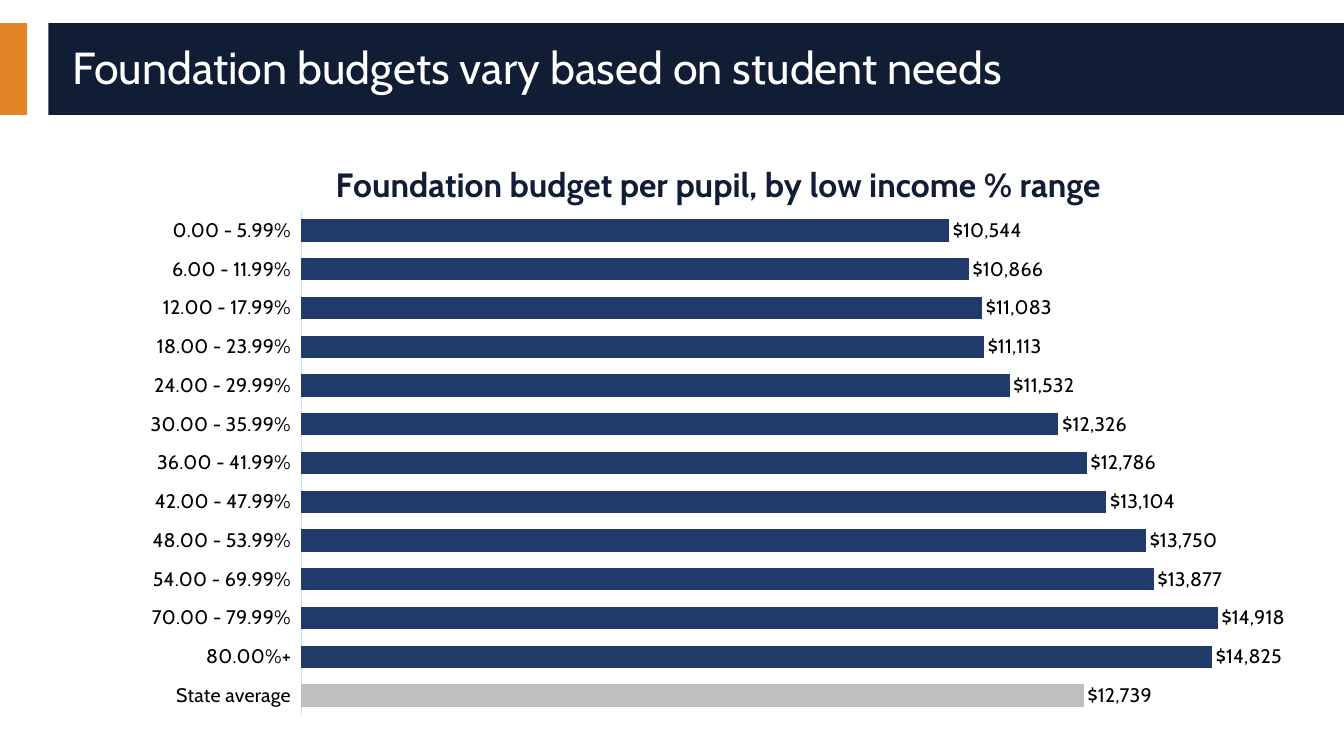
from lxml.etree import SubElement
from pptx import Presentation
from pptx.chart.data import CategoryChartData
from pptx.dml.color import RGBColor
from pptx.enum.chart import XL_CHART_TYPE, XL_LABEL_POSITION, XL_TICK_LABEL_POSITION, XL_TICK_MARK
from pptx.enum.shapes import MSO_SHAPE
from pptx.enum.text import MSO_ANCHOR, MSO_AUTO_SIZE, PP_ALIGN
from pptx.oxml.ns import qn
from pptx.util import Inches, Pt

NAVY, BLUE, ORANGE, GREY = "101D35", "203B6A", "E38526", "BFBFBF"
MONEY = '"$"#,##0'


def style(font, tint, **form):
    """Set the colour and any other format values of a font."""
    font.color.rgb = RGBColor.from_string(tint)
    for key, val in {"name": "Cabin", "bold": False, **form}.items():
        setattr(font, key, val)


def place(owner, before, **spots):
    """Give a chart part a fixed place, as shares of the chart's size."""
    for old in owner.findall(qn("c:layout")):
        owner.remove(old)
    layout = SubElement(owner, qn("c:layout"))
    before.addprevious(layout)
    manual = SubElement(layout, qn("c:manualLayout"))
    for key, val in spots.items():
        SubElement(manual, qn("c:" + key)).set("val", str(val))


deck = Presentation()
deck.slide_width, deck.slide_height = Inches(13.33), Inches(7.5)
slide = deck.slides.add_slide(deck.slide_layouts[5])
wide = deck.slide_width

# Header band, kept behind the title
top, high = Inches(0.23), Inches(0.91)
edge = Inches(0.48)
bands = [(0, Inches(0.27), ORANGE), (edge, wide - edge, NAVY)]
for spot, (left, width, tint) in enumerate(bands, 2):
    band = slide.shapes.add_shape(MSO_SHAPE.RECTANGLE, left, top, width, high)
    band.shadow.inherit = False
    band.fill.solid()
    band.fill.fore_color.rgb = RGBColor.from_string(tint)
    band.line.fill.background()
    slide.shapes._spTree.insert(spot, band._element)

# Title
title = slide.shapes.title
box = {"left": 0.62, "top": 0.32, "width": 12.44, "height": 0.74}
for key, val in box.items():
    setattr(title, key, Inches(val))
frame = title.text_frame
frame.text = "Foundation budgets vary based on student needs"
frame.vertical_anchor = MSO_ANCHOR.MIDDLE
frame.auto_size = MSO_AUTO_SIZE.NONE
para = frame.paragraphs[0]
para.alignment, para.line_spacing = PP_ALIGN.LEFT, 0.9
style(para.runs[0].font, "FFFFFF", size=Pt(32))

# Chart values, from the bottom bar up
budgets = {
    "State average": 12739,
    "80.00%+": 14825,
    "70.00 - 79.99%": 14918,
    "54.00 - 69.99%": 13877,
    "48.00 - 53.99%": 13750,
    "42.00 - 47.99%": 13104,
    "36.00 - 41.99%": 12786,
    "30.00 - 35.99%": 12326,
    "24.00 - 29.99%": 11532,
    "18.00 - 23.99%": 11113,
    "12.00 - 17.99%": 11083,
    "6.00 - 11.99%": 10866,
    "0.00 - 5.99%": 10544,
}
data = CategoryChartData(number_format=MONEY)
data.categories = list(budgets)
data.add_series("Series 1", list(budgets.values()))
chart = slide.shapes.add_chart(
    XL_CHART_TYPE.BAR_CLUSTERED, Inches(1.28), Inches(1.3),
    Inches(11.69), Inches(5.93), data).chart
chart.has_legend = False
style(chart.font, BLUE, size=Pt(10))

# Chart title
head = chart.chart_title
head.text_frame.text = "Foundation budget per pupil, by low income % range"
style(head.text_frame.paragraphs[0].runs[0].font, NAVY, size=Pt(24), bold=True)
head.include_in_layout = False
place(head._element, head._element.find(qn("c:overlay")),
      xMode="edge", yMode="edge", x=0.17, y=0.04)

# Axes
cats, vals = chart.category_axis, chart.value_axis
cats.major_tick_mark = cats.minor_tick_mark = XL_TICK_MARK.NONE
cats.tick_label_position = XL_TICK_LABEL_POSITION.LOW
cats.format.line.color.rgb = RGBColor.from_string("D4DFF2")
cats.format.line.width = Pt(0.75)
style(cats.tick_labels.font, "000000", size=Pt(14))
vals.has_major_gridlines = vals.visible = False
vals.minimum_scale, vals.maximum_scale = 0, 16000
vals.tick_labels.number_format = MONEY
vals.tick_labels.number_format_is_linked = False

# Bars and their labels
plot = chart.plots[0]
plot.gap_width, plot.vary_by_categories = 75, False
bars = plot.series[0]
for part, tint in ((bars, BLUE), (bars.points[0], GREY)):
    part.format.fill.solid()
    part.format.fill.fore_color.rgb = RGBColor.from_string(tint)
labels = bars.data_labels
form = {"show_value": True, "number_format": MONEY,
        "number_format_is_linked": False,
        "position": XL_LABEL_POSITION.OUTSIDE_END}
for key, val in form.items():
    setattr(labels, key, val)
style(labels.font, "000000", size=Pt(14))

# Plot area
area = chart._chartSpace.chart.plotArea
place(area, area.find(qn("c:barChart")), layoutTarget="inner",
      xMode="edge", yMode="edge", x=0.146, y=0.134, w=0.834, h=0.843)

deck.save("out.pptx")
